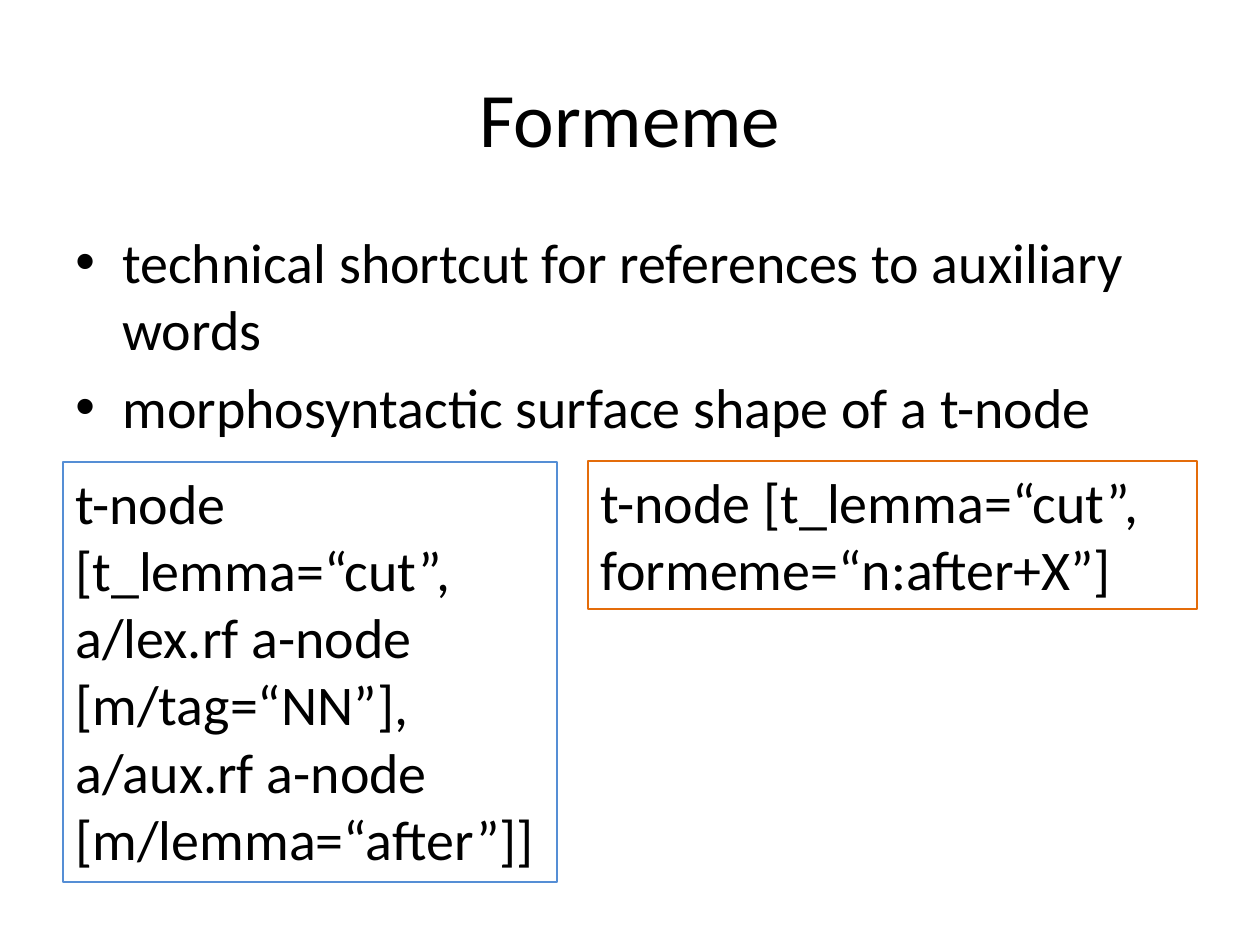
from dataclasses import dataclass

from lxml.etree import SubElement
from pptx import Presentation
from pptx.dml.color import RGBColor
from pptx.enum.shapes import MSO_SHAPE
from pptx.enum.text import MSO_ANCHOR, MSO_AUTO_SIZE, PP_ALIGN
from pptx.oxml.ns import qn
from pptx.util import Emu, Pt

PX_PER_INCH = 126


def px(n):
    return Emu(round(n * 914400 / PX_PER_INCH))


@dataclass(frozen=True)
class Theme:
    font: str = "Calibri"
    text: str = "000000"
    blue: str = "558ED5"
    orange: str = "E46C0A"
    title_size: int = 44
    body_size: int = 32
    line_width: float = 0.75


class SlideBuilder:
    """Draws titles, bullet lists and outlined boxes on one slide."""

    def __init__(self, slide, theme):
        self.s = slide
        self.theme = theme

    def add_run(self, p, text, size):
        r = p.add_run()
        r.text = text
        r.font.name = self.theme.font
        r.font.size = Pt(size)
        r.font.color.rgb = RGBColor.from_string(self.theme.text)

    def text_frame(self, box):
        tf = self.s.shapes.add_textbox(*map(px, box)).text_frame
        tf.word_wrap = True
        return tf

    def title(self, box, text):
        tf = self.text_frame(box)
        tf.vertical_anchor = MSO_ANCHOR.MIDDLE
        p = tf.paragraphs[0]
        p.alignment = PP_ALIGN.CENTER
        self.add_run(p, text, self.theme.title_size)

    def bullets(self, box, items, indent):
        tf = self.text_frame(box)
        for i, item in enumerate(items):
            p = tf.add_paragraph() if i else tf.paragraphs[0]
            p.space_after = Pt(self.theme.body_size * 0.2)
            pPr = p._p.get_or_add_pPr()
            pPr.set("marL", str(px(indent)))
            pPr.set("indent", str(-px(indent)))
            SubElement(pPr, qn("a:buFont")).set("typeface", "Arial")
            SubElement(pPr, qn("a:buChar")).set("char", "•")
            self.add_run(p, item, self.theme.body_size)

    def outlined_box(self, box, text, color):
        sp = self.s.shapes.add_shape(MSO_SHAPE.RECTANGLE, *map(px, box))
        sp.shadow.inherit = False
        sp.fill.background()
        sp.line.color.rgb = RGBColor.from_string(color)
        sp.line.width = Pt(self.theme.line_width)
        tf = sp.text_frame
        tf.word_wrap = True
        tf.auto_size = MSO_AUTO_SIZE.SHAPE_TO_FIT_TEXT
        tf.vertical_anchor = MSO_ANCHOR.TOP
        p = tf.paragraphs[0]
        p.alignment = PP_ALIGN.LEFT
        self.add_run(p, text, self.theme.body_size)


def main():
    prs = Presentation()
    prs.slide_width, prs.slide_height = px(1260), px(945)
    theme = Theme()
    b = SlideBuilder(prs.slides.add_slide(prs.slide_layouts[6]), theme)

    b.title((63, 38, 1134, 157), "Formeme")
    b.bullets(
        (63, 221, 1134, 147),
        [
            "technical shortcut for references to auxiliary words",
            "morphosyntactic surface shape of a t-node",
        ],
        indent=47,
    )
    b.outlined_box(
        (63, 462, 494, 420),
        "t-node [t_lemma=“cut”, a/lex.rf a-node [m/tag=“NN”], "
        "a/aux.rf a-node [m/lemma=“after”]]",
        theme.blue,
    )
    b.outlined_box(
        (588, 461, 609, 148),
        "t-node [t_lemma=“cut”, formeme=“n:after+X”]",
        theme.orange,
    )
    prs.save("out.pptx")


if __name__ == "__main__":
    main()
